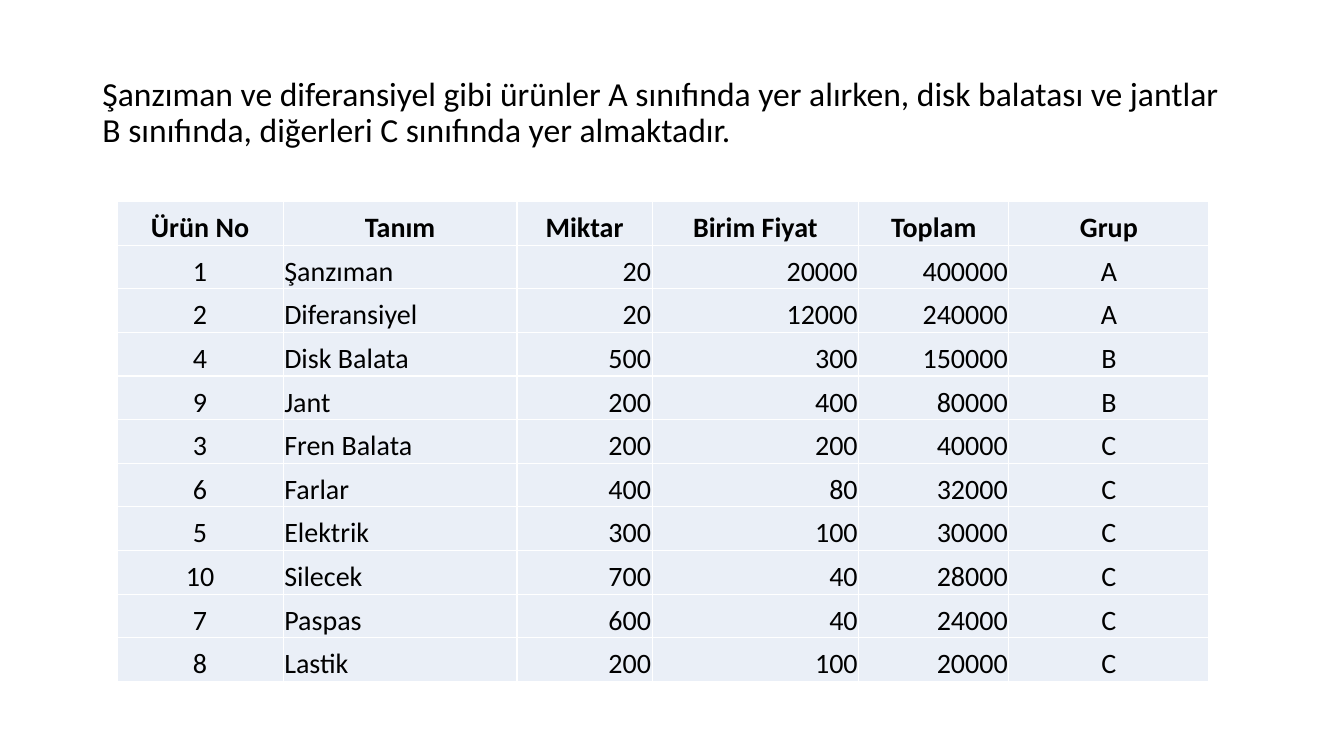
"""Build the slide that sorts car parts into the groups A, B and C."""
import dataclasses

import lxml.etree
import pptx
import pptx.dml.color
import pptx.enum.text
import pptx.oxml.ns
import pptx.slide
import pptx.table
import pptx.text.text
import pptx.util

Pt = pptx.util.Pt
Align = pptx.enum.text.PP_ALIGN
Anchor = pptx.enum.text.MSO_ANCHOR
BLACK = pptx.dml.color.RGBColor(0x00, 0x00, 0x00)
WHITE = pptx.dml.color.RGBColor(0xFF, 0xFF, 0xFF)
PALE = pptx.dml.color.RGBColor(0xEA, 0xEF, 0xF7)
FONT = "Calibri"
ROW = 31.16
TITLE = (
    "Şanzıman ve diferansiyel gibi ürünler A sınıfında yer alırken, "
    "disk balatası ve jantlar B sınıfında, diğerleri C sınıfında yer almaktadır."
)


@dataclasses.dataclass(frozen=True)
class Column:
    head: str
    width: float
    align: Align


@dataclasses.dataclass(frozen=True)
class Part:
    number: int
    name: str
    count: int
    price: int
    group: str

    def texts(self) -> list[str]:
        total = self.count * self.price
        values = (self.number, self.name, self.count, self.price, total, self.group)
        return [str(value) for value in values]


COLUMNS = (
    Column("Ürün No", 118.8, Align.CENTER),
    Column("Tanım", 167.04, Align.LEFT),
    Column("Miktar", 96.48, Align.RIGHT),
    Column("Birim Fiyat", 147.6, Align.RIGHT),
    Column("Toplam", 107.28, Align.RIGHT),
    Column("Grup", 142.9, Align.CENTER),
)
PARTS = (
    Part(1, "Şanzıman", 20, 20000, "A"),
    Part(2, "Diferansiyel", 20, 12000, "A"),
    Part(4, "Disk Balata", 500, 300, "B"),
    Part(9, "Jant", 200, 400, "B"),
    Part(3, "Fren Balata", 200, 200, "C"),
    Part(6, "Farlar", 400, 80, "C"),
    Part(5, "Elektrik", 300, 100, "C"),
    Part(10, "Silecek", 700, 40, "C"),
    Part(7, "Paspas", 600, 40, "C"),
    Part(8, "Lastik", 200, 100, "C"),
)


def style(para: pptx.text.text._Paragraph, size: float, align: Align, bold: bool = False) -> None:
    para.alignment = align
    para.font.name = FONT
    para.font.size = Pt(size)
    para.font.bold = bold
    para.font.color.rgb = BLACK


def border(cell: pptx.table._Cell) -> None:
    qn = pptx.oxml.ns.qn
    props = cell._tc.get_or_add_tcPr()
    for side in ("a:lnL", "a:lnR", "a:lnT", "a:lnB"):
        line = lxml.etree.SubElement(props, qn(side), w=str(Pt(1)))
        fill = lxml.etree.SubElement(line, qn("a:solidFill"))
        lxml.etree.SubElement(fill, qn("a:srgbClr"), val=str(WHITE))


def write(cell: pptx.table._Cell, text: str, align: Align, bold: bool) -> None:
    cell.text = text
    cell.vertical_anchor = Anchor.BOTTOM
    cell.margin_left = cell.margin_right = cell.margin_top = Pt(0.75)
    cell.margin_bottom = Pt(0)
    border(cell)
    cell.fill.solid()
    cell.fill.fore_color.rgb = PALE
    style(cell.text_frame.paragraphs[0], 20, align, bold)


def add_title(slide: pptx.slide.Slide) -> None:
    title = slide.shapes.title
    title.left, title.top = Pt(66), Pt(28.75)
    title.width, title.height = Pt(828), Pt(104.4)
    frame = title.text_frame
    frame.text = TITLE
    frame.word_wrap = True
    frame.vertical_anchor = Anchor.MIDDLE
    para = frame.paragraphs[0]
    para.line_spacing = 0.9
    style(para, 24, Align.LEFT)


def add_parts(slide: pptx.slide.Slide) -> None:
    rows = [[column.head for column in COLUMNS]] + [part.texts() for part in PARTS]
    width = sum(column.width for column in COLUMNS)
    table = slide.shapes.add_table(
        len(rows), len(COLUMNS), Pt(83.5), Pt(144), Pt(width), Pt(ROW * len(rows))
    ).table
    for index, column in enumerate(COLUMNS):
        table.columns[index].width = Pt(column.width)
    for index, texts in enumerate(rows):
        table.rows[index].height = Pt(ROW)
        head = index == 0
        for place, (column, text) in enumerate(zip(COLUMNS, texts)):
            align = Align.CENTER if head else column.align
            write(table.cell(index, place), text, align, head)


def main() -> None:
    deck = pptx.Presentation()
    deck.slide_width, deck.slide_height = Pt(960), Pt(540)
    slide = deck.slides.add_slide(deck.slide_layouts.get_by_name("Title Only"))
    add_title(slide)
    add_parts(slide)
    deck.save("out.pptx")


if __name__ == "__main__":
    main()
